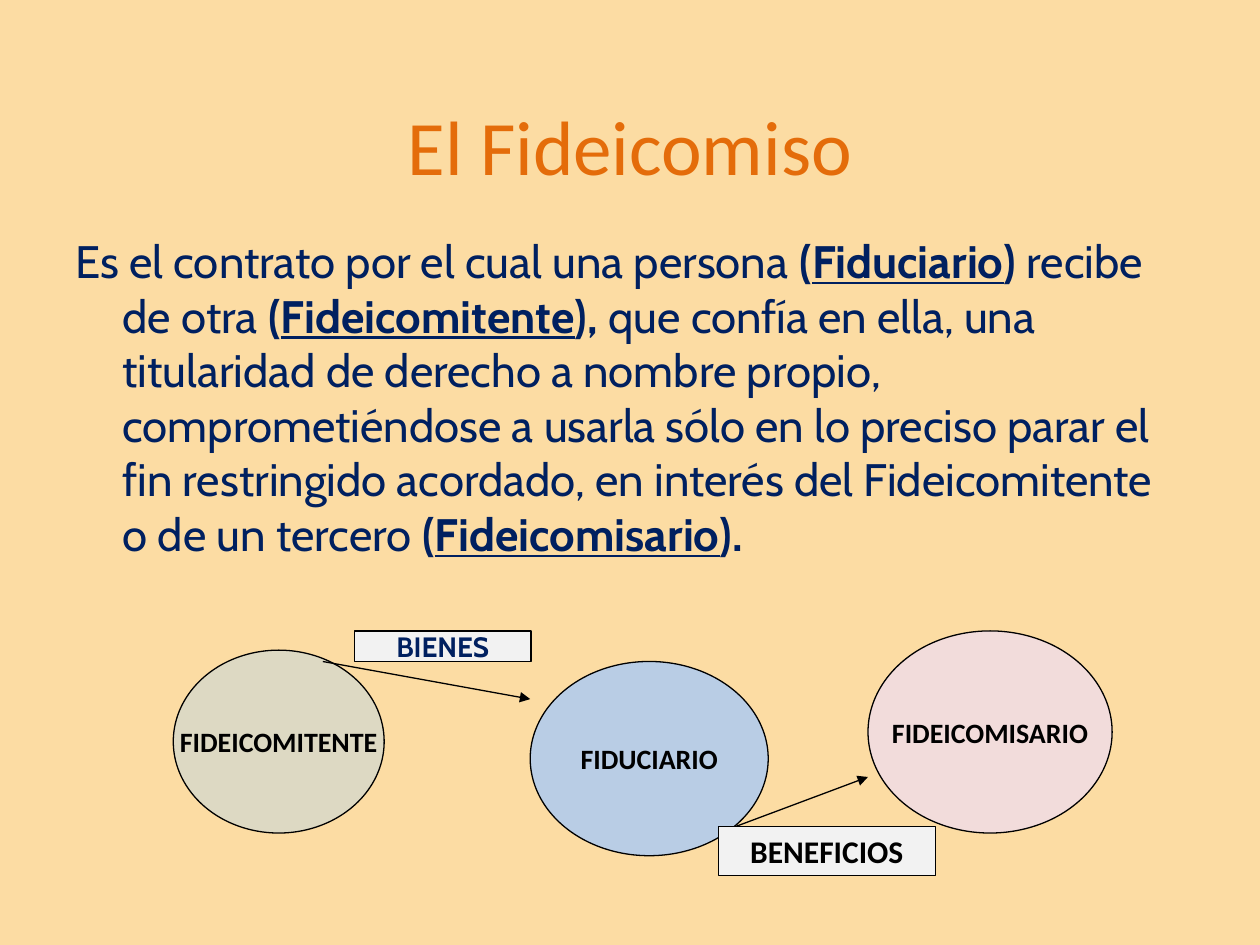
from lxml.etree import SubElement
from pptx import Presentation
from pptx.dml.color import RGBColor
from pptx.enum.shapes import MSO_CONNECTOR, MSO_SHAPE
from pptx.enum.text import MSO_ANCHOR, PP_ALIGN
from pptx.oxml.ns import qn
from pptx.util import Pt

NAVY, BLACK, ORANGE = "002060", "000000", "E46C0A"
SAND, LABEL_GREY = "FCDCA3", "F2F2F2"

DEFINITION = [
    ("Es el contrato por el cual una persona ", "Fiduciario", ") "),
    ("recibe de otra ", "Fideicomitente", "), "),
    ("que confía en ella, una titularidad de derecho a nombre propio, "
     "comprometiéndose a usarla sólo en lo preciso parar el fin restringido "
     "acordado, en interés del Fideicomitente o de un tercero ",
     "Fideicomisario", ")."),
]


def color(value):
    """Turn a hex string into a colour."""
    return RGBColor.from_string(value)


def add_span(para, text, size=16, font="Calibri", ink=BLACK, bold=False, underline=False):
    """Append formatted text to a paragraph."""
    span = para.add_run()
    span.text = text
    span.font.size = Pt(size)
    span.font.name = font
    span.font.color.rgb = color(ink)
    span.font.bold = bold
    span.font.underline = underline


def add_shape(page, kind, bounds, fill, line=BLACK, text=None, **text_format):
    """Draw a filled, outlined shape with an optional centred bold label."""
    shape = page.shapes.add_shape(kind, *map(Pt, bounds))
    shape.shadow.inherit = False
    shape.fill.solid()
    shape.fill.fore_color.rgb = color(fill)
    shape.line.color.rgb = color(line)
    shape.line.width = Pt(0.75)
    if text:
        frame = shape.text_frame
        frame.word_wrap = False
        frame.vertical_anchor = MSO_ANCHOR.MIDDLE
        para = frame.paragraphs[0]
        para.alignment = PP_ALIGN.CENTER
        add_span(para, text, bold=True, **text_format)


def add_arrow(page, start, end):
    """Draw a thin arrow from start to end."""
    arrow = page.shapes.add_connector(MSO_CONNECTOR.STRAIGHT, *map(Pt, start + end))
    arrow.line.color.rgb = color(BLACK)
    arrow.line.width = Pt(0.75)
    SubElement(arrow.line._get_or_add_ln(), qn("a:tailEnd"), type="triangle")
    SubElement(arrow._element.spPr, qn("a:effectLst"))


def add_text_box(page, bounds, anchor):
    """Add a wrapping text box and return its first paragraph."""
    frame = page.shapes.add_textbox(*map(Pt, bounds)).text_frame
    frame.word_wrap = True
    frame.vertical_anchor = anchor
    return frame.paragraphs[0]


def add_title(page):
    """Write the centred title."""
    para = add_text_box(page, (36, 39.6, 648, 86.4), MSO_ANCHOR.MIDDLE)
    para.alignment = PP_ALIGN.CENTER
    add_span(para, "El Fideicomiso", size=44, ink=ORANGE)


def add_definition(page):
    """Write the definition with its parties in bold and underlined."""
    para = add_text_box(page, (36, 129.6, 648, 356.4), MSO_ANCHOR.TOP)
    para.space_before = Pt(5.2)
    properties = para._p.get_or_add_pPr()
    properties.set("marL", str(Pt(27)))
    properties.set("indent", str(Pt(-27)))
    style = {"size": 26, "font": "Cabin", "ink": NAVY}
    for plain, party, closing in DEFINITION:
        add_span(para, plain, **style)
        add_span(para, "(", bold=True, **style)
        add_span(para, party, bold=True, underline=True, **style)
        add_span(para, closing, bold=True, **style)


def add_diagram(page):
    """Draw the three parties and the flows between them."""
    parties = [
        ("FIDUCIARIO", (303, 378, 136, 111), "B9CDE5"),
        ("FIDEICOMISARIO", (496, 360.5, 139.5, 115.5), "F2DCDB"),
        ("FIDEICOMITENTE", (99, 371.5, 120.5, 104.5), "DDD9C3"),
    ]
    for name, bounds, fill in parties:
        add_shape(page, MSO_SHAPE.OVAL, bounds, fill, text=name)
    add_shape(page, MSO_SHAPE.RECTANGLE, (202.5, 360.5, 101, 17.5), LABEL_GREY,
              text="BIENES", font="Cabin", ink=NAVY)
    add_arrow(page, (184.5, 378), (303, 399.5))
    add_arrow(page, (410.5, 476), (496, 444))
    add_shape(page, MSO_SHAPE.RECTANGLE, (410.5, 472.5, 124, 28), LABEL_GREY,
              text="BENEFICIOS", size=18)


def main():
    """Build and save the slide."""
    deck = Presentation()
    deck.slide_width, deck.slide_height = Pt(720), Pt(540)
    page = deck.slides.add_slide(deck.slide_layouts[6])
    add_shape(page, MSO_SHAPE.RECTANGLE, (0, 0, 720, 540), SAND, line=SAND)
    add_title(page)
    add_definition(page)
    add_diagram(page)
    deck.save("out.pptx")


if __name__ == "__main__":
    main()
